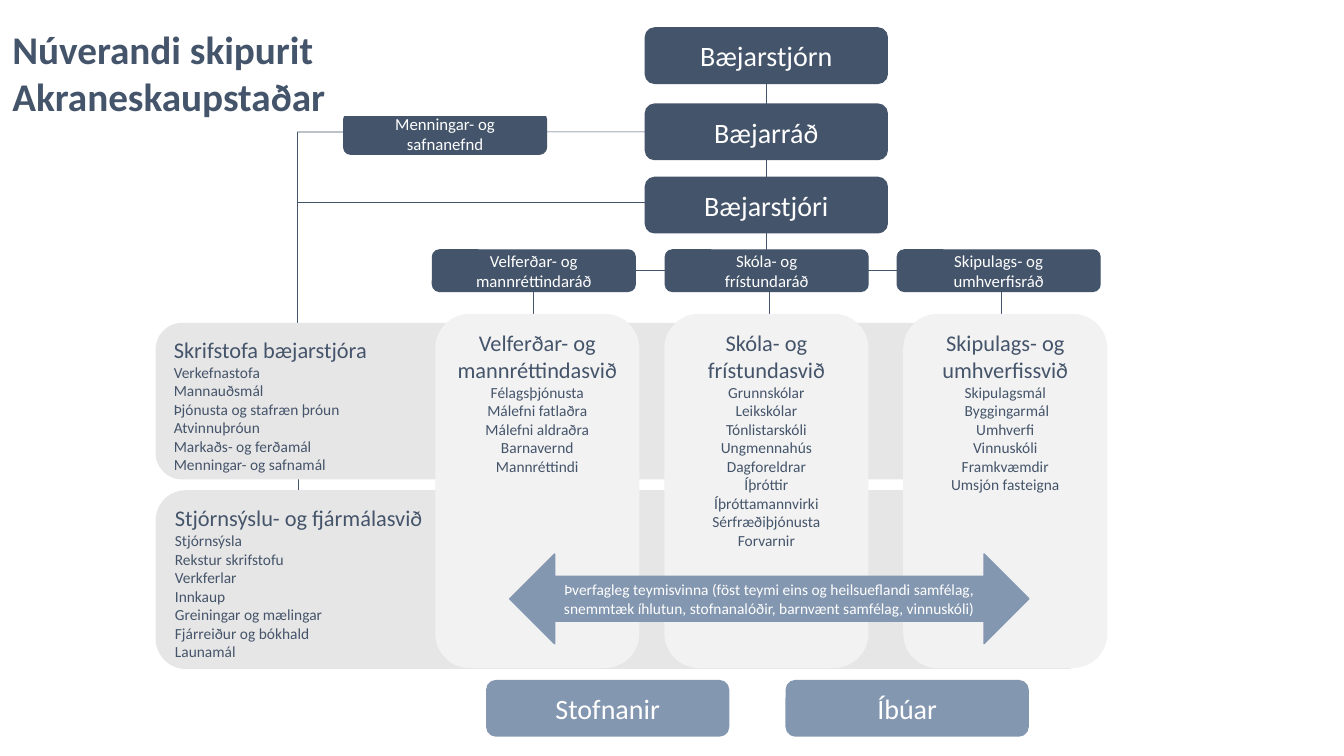
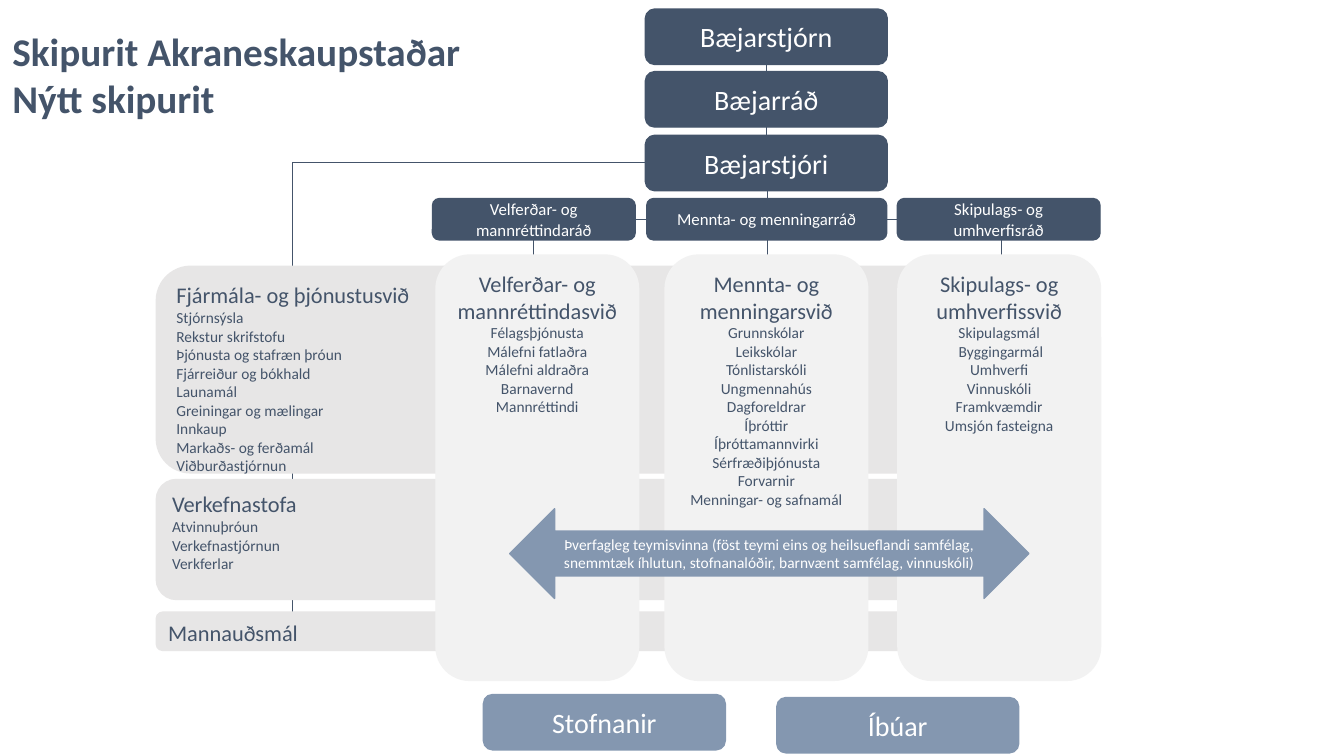
from dataclasses import dataclass

from lxml import etree
from pptx import Presentation
from pptx.dml.color import RGBColor
from pptx.enum.shapes import MSO_CONNECTOR, MSO_SHAPE
from pptx.enum.text import MSO_ANCHOR, MSO_AUTO_SIZE, PP_ALIGN
from pptx.oxml.ns import qn
from pptx.util import Inches, Pt

ROUNDED = MSO_SHAPE.ROUNDED_RECTANGLE
DOUBLE_ARROW = MSO_SHAPE.LEFT_RIGHT_ARROW
STRAIGHT = MSO_CONNECTOR.STRAIGHT
TOP, MIDDLE = MSO_ANCHOR.TOP, MSO_ANCHOR.MIDDLE
LEFT, CENTER = PP_ALIGN.LEFT, PP_ALIGN.CENTER
TOP_SIDE, LEFT_SIDE, BOTTOM_SIDE, RIGHT_SIDE = range(4)
TITLE_ONLY = 5


@dataclass(frozen=True)
class Theme:
    font: str = "Calibri"
    navy: str = "44546A"
    steel: str = "8497B0"
    band: str = "E7E6E6"
    column: str = "F2F2F2"
    white: str = "FFFFFF"
    title_size: int = 28
    leader_size: int = 20
    heading_size: int = 16
    board_size: int = 12
    item_size: int = 11
    line_width: float = 0.5
    outline_width: int = 1


THEME = Theme()
SLIDE_WIDTH, SLIDE_HEIGHT = Inches(13.33), Inches(7.5)

AXIS = 57.02
LEADER_WIDTH, LEADER_HEIGHT = 18, 7.33
LEADER_LEFT = AXIS - LEADER_WIDTH / 2
BOARD_WIDTH, BOARD_HEIGHT = 15.08, 5.47
BOARD_CENTERS = 39.72, 57.05, 74.31
DROP_LENGTH = 8.4
LEFT_DROP, MIDDLE_DROP, RIGHT_DROP = 39.68, 57.24, 74.49
RAIL_LEFT, RAIL_RIGHT = 37.51, 81.85
BAND_LEFT, NARROW_BAND, WIDE_BAND = 11.63, 69.24, 69.84
ARROW_CENTER, ARROW_WIDTH, ARROW_HEIGHT = 57.24, 38.63, 11.87

LEADERS = ("Bæjarstjórn", "Bæjarráð", "Bæjarstjóri")
WELFARE_BOARD = ["Velferðar- og mannréttindaráð"]
PLANNING_BOARD = ["Skipulags- og umhverfisráð"]
WELFARE = ["Velferðar- og mannréttindasvið", "Félagsþjónusta", "Málefni fatlaðra",
           "Málefni aldraðra Barnavernd", "Mannréttindi"]
SCHOOL_ITEMS = ["Grunnskólar", "Leikskólar", "Tónlistarskóli", "Ungmennahús",
                "Dagforeldrar", "Íþróttir", "Íþróttamannvirki Sérfræðiþjónusta",
                "Forvarnir"]
PLANNING = ["Skipulags- og umhverfissvið", "Skipulagsmál", " Byggingarmál", "Umhverfi",
            "Vinnuskóli", "Framkvæmdir", "Umsjón fasteigna"]
TEAMWORK = ("Þverfagleg teymisvinna (föst teymi eins og heilsueflandi samfélag, "
            "snemmtæk íhlutun, stofnanalóðir, barnvænt samfélag, vinnuskóli)")

CURRENT = {
    "title": ["Núverandi skipurit Akraneskaupstaðar"],
    "title_span": (3.87, 11.47),
    "leader_tops": (3.7, 13.78, 23.47),
    "spine_end": 36.27,
    "lines": ((22.21, 68.4, 22.21, 42.67), (22.13, 43.2, 22.13, 17.47),
              (48.16, 26.8, 22.13, 26.8), (MIDDLE_DROP, 38.53, MIDDLE_DROP, 46.93)),
    "committee_line": (LEADER_LEFT, 17.45, 22.13, 17.45),
    "committee": (33.12, 14.93, ["Menningar- og safnanefnd"]),
    "board_top": 33.07,
    "boards": ((WELFARE_BOARD, BOARD_WIDTH),
               (["Skóla- og", "frístundaráð"], BOARD_WIDTH),
               (PLANNING_BOARD, BOARD_WIDTH)),
    "column_top": 41.6,
    "column_height": 46.67,
    "columns": ((39.98, WELFARE),
                (57.03, ["Skóla- og frístundasvið"] + SCHOOL_ITEMS),
                (74.8, PLANNING)),
    "bands": (
        (42.8, 20.53, NARROW_BAND,
         ["Skrifstofa bæjarstjóra", "Verkefnastofa", "Mannauðsmál",
          "Þjónusta og stafræn þróun", "Atvinnuþróun", "Markaðs- og ferðamál",
          "Menningar- og safnamál"]),
        (64.93, 23.47, WIDE_BAND,
         ["Stjórnsýslu- og fjármálasvið", "Stjórnsýsla", "Rekstur skrifstofu",
          "Verkferlar", "Innkaup", "Greiningar og mælingar",
          "Fjárreiður og bókhald", "Launamál"]),
    ),
    "arrow_top": 73.27,
    "partners": ((45.22, 90.03, "Stofnanir"), (67.5, 90.03, "Íbúar")),
}

PROPOSED = {
    "title": ["Skipurit Akraneskaupstaðar", "Nýtt skipurit"],
    "title_span": (1.65, 16.27),
    "leader_tops": (1.2, 9.48, 17.9),
    "spine_end": 17.9,
    "lines": ((48.16, 21.5, 21.76, 21.5), (21.76, 82.53, 21.76, 21.5),
              (57.09, 37.33, 57.09, 23.2)),
    "committee_line": None,
    "committee": None,
    "board_top": 26.27,
    "boards": ((WELFARE_BOARD, BOARD_WIDTH),
               (["Mennta- og menningarráð"], 17.85),
               (PLANNING_BOARD, BOARD_WIDTH)),
    "column_top": 33.73,
    "column_height": 56.27,
    "columns": ((39.98, WELFARE),
                (57.03, ["Mennta- og menningarsvið"] + SCHOOL_ITEMS
                 + ["Menningar- og safnamál"]),
                (74.35, PLANNING)),
    "bands": (
        (35.23, 27.33, WIDE_BAND,
         ["Fjármála- og þjónustusvið", "Stjórnsýsla", "Rekstur skrifstofu",
          "Þjónusta og stafræn þróun", "Fjárreiður og bókhald", "Launamál",
          "Greiningar og mælingar", "Innkaup", "Markaðs- og ferðamál",
          "Viðburðastjórnun"]),
        (63.43, 15.87, NARROW_BAND,
         ["Verkefnastofa", "Atvinnuþróun", "Verkefnastjórnun", "Verkferlar"]),
        (80.97, 5.07, NARROW_BAND, ["Mannauðsmál"]),
    ),
    "arrow_top": 67.29,
    "partners": ((44.97, 91.87, "Stofnanir"), (66.8, 92.27, "Íbúar")),
}


def across(percent):
    return round(SLIDE_WIDTH * percent / 100)


def down(percent):
    return round(SLIDE_HEIGHT * percent / 100)


def fill_solid(shape, color):
    shape.fill.solid()
    shape.fill.fore_color.rgb = RGBColor.from_string(color)


def write_lines(text_frame, lines, sizes, color, alignment, anchor, bold=False):
    text_frame.word_wrap = True
    text_frame.vertical_anchor = anchor
    for index, line in enumerate(lines):
        paragraph = text_frame.paragraphs[0] if index == 0 else text_frame.add_paragraph()
        paragraph.alignment = alignment
        run = paragraph.add_run()
        run.text = line
        run.font.name = THEME.font
        run.font.size = Pt(sizes[min(index, len(sizes) - 1)])
        run.font.bold = bold
        run.font.color.rgb = RGBColor.from_string(color)


def place_title(slide, lines, top, height):
    title = slide.shapes.title
    title.left, title.top = across(0.17), down(top)
    title.width, title.height = across(43.36), down(height)
    fill_solid(title, THEME.white)
    title.text_frame.auto_size = MSO_AUTO_SIZE.NONE
    write_lines(title.text_frame, lines, [THEME.title_size], THEME.navy, LEFT, MIDDLE, True)
    return title


def bring_to_front(shape):
    shape.element.getparent().append(shape.element)


def add_block(slide, kind, center, top, width, height, color):
    shape = slide.shapes.add_shape(kind, across(center - width / 2), down(top),
                                   across(width), down(height))
    shape.shadow.inherit = False
    fill_solid(shape, color)
    shape.line.color.rgb = RGBColor.from_string(color)
    shape.line.width = Pt(THEME.outline_width)
    return shape


def add_label(slide, kind, center, top, width, height, color, lines, size):
    shape = add_block(slide, kind, center, top, width, height, color)
    write_lines(shape.text_frame, lines, [size], THEME.white, CENTER, MIDDLE)
    return shape


def add_leader(slide, center, top, text, color):
    return add_label(slide, ROUNDED, center, top, LEADER_WIDTH, LEADER_HEIGHT, color,
                     [text], THEME.leader_size)


def add_board(slide, center, top, lines, width=BOARD_WIDTH):
    return add_label(slide, ROUNDED, center, top, width, BOARD_HEIGHT, THEME.navy,
                     lines, THEME.board_size)


def add_division(slide, center, top, width, height, color, lines, alignment):
    shape = add_block(slide, ROUNDED, center, top, width, height, color)
    write_lines(shape.text_frame, lines, [THEME.heading_size, THEME.item_size],
                THEME.navy, alignment, TOP)


def add_line(slide, left, top, right, bottom):
    connector = slide.shapes.add_connector(STRAIGHT, across(left), down(top),
                                           across(right), down(bottom))
    connector.line.color.rgb = RGBColor.from_string(THEME.navy)
    connector.line.width = Pt(THEME.line_width)
    properties = connector.element.find(qn("p:spPr"))
    etree.SubElement(properties, qn("a:effectLst"))
    return connector


def add_board_lines(slide, board_top):
    middle = board_top + BOARD_HEIGHT / 2
    bottom = board_top + BOARD_HEIGHT
    for x, top in ((LEFT_DROP, middle), (RIGHT_DROP, bottom)):
        add_line(slide, x, top, x, top + DROP_LENGTH)
    return add_line(slide, RAIL_RIGHT, middle, RAIL_LEFT, middle)


def build_chart(presentation, chart):
    slide = presentation.slides.add_slide(presentation.slide_layouts[TITLE_ONLY])
    title = place_title(slide, chart["title"], *chart["title_span"])

    for ends in chart["lines"]:
        add_line(slide, *ends)
    rail = add_board_lines(slide, chart["board_top"])
    spine = add_line(slide, AXIS, chart["leader_tops"][0] + LEADER_HEIGHT,
                     AXIS, chart["spine_end"])

    for top, height, width, lines in chart["bands"]:
        add_division(slide, BAND_LEFT + width / 2, top, width, height,
                     THEME.band, lines, LEFT)
    for center, lines in chart["columns"]:
        add_division(slide, center, chart["column_top"], BOARD_WIDTH,
                     chart["column_height"], THEME.column, lines, CENTER)

    leaders = [add_leader(slide, AXIS, top, text, THEME.navy)
               for top, text in zip(chart["leader_tops"], LEADERS)]
    spine.begin_connect(leaders[0], BOTTOM_SIDE)
    if chart["spine_end"] == chart["leader_tops"][-1]:
        spine.end_connect(leaders[-1], TOP_SIDE)

    if chart["committee"]:
        link = add_line(slide, *chart["committee_line"])
        link.begin_connect(leaders[1], LEFT_SIDE)
        add_board(slide, *chart["committee"])
        bring_to_front(title)

    boards = [add_board(slide, center, chart["board_top"], lines, width)
              for center, (lines, width) in zip(BOARD_CENTERS, chart["boards"])]
    rail.begin_connect(boards[-1], RIGHT_SIDE)

    add_label(slide, DOUBLE_ARROW, ARROW_CENTER, chart["arrow_top"], ARROW_WIDTH,
              ARROW_HEIGHT, THEME.steel, [TEAMWORK], THEME.item_size)
    for center, top, text in chart["partners"]:
        add_leader(slide, center, top, text, THEME.steel)


def main():
    presentation = Presentation()
    presentation.slide_width, presentation.slide_height = SLIDE_WIDTH, SLIDE_HEIGHT
    for chart in (CURRENT, PROPOSED):
        build_chart(presentation, chart)
    presentation.save("out.pptx")


if __name__ == "__main__":
    main()
